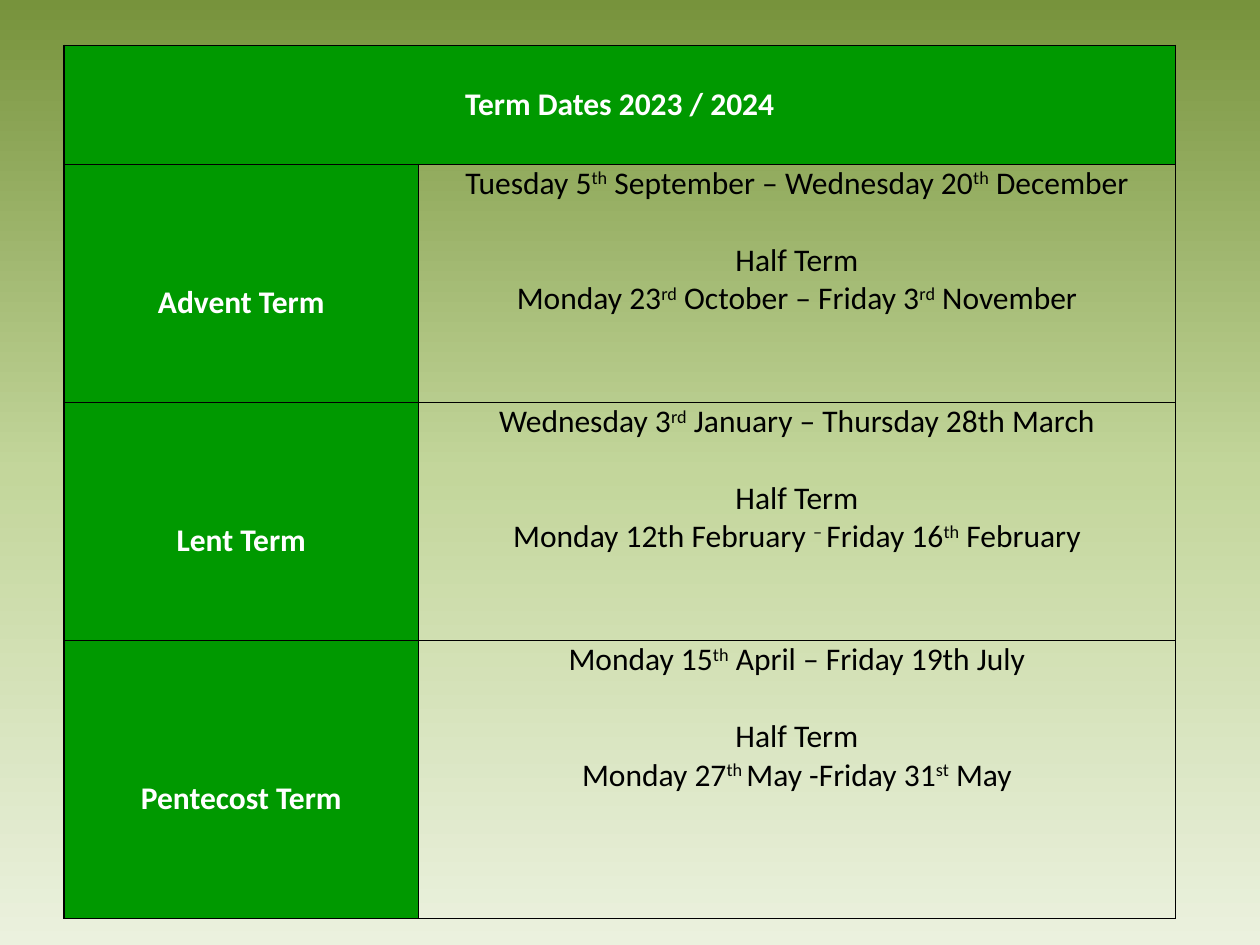
"""Build the term dates slide: a bordered table on a green gradient."""
from dataclasses import dataclass

from lxml.etree import SubElement
from pptx import Presentation
from pptx.dml.color import RGBColor
from pptx.enum.text import MSO_ANCHOR as Anchor, PP_ALIGN as Align
from pptx.oxml.ns import qn
from pptx.slide import Slide
from pptx.table import _Cell as Cell
from pptx.util import Inches, Pt

WIDTH, HEIGHT = Inches(10), Inches(7.5)
GREEN = RGBColor(0x00, 0x99, 0x00)
WHITE = RGBColor(0xFF, 0xFF, 0xFF)
BLACK = RGBColor(0x00, 0x00, 0x00)
GRADIENT = (
    (0, RGBColor(0x77, 0x93, 0x3C)),
    (50, RGBColor(0xC3, 0xD6, 0x9B)),
    (100, RGBColor(0xEB, 0xF1, 0xDE)),
)
FONT = "Calibri"
TEXT_SIZE = Pt(18)
BLANK_LINE = Pt(22)
SUPERSCRIPT_MARK = "^"
LEFT, TOP = 5.1, 4.8
COLUMN_SHARES = (28.1, 60.1)
ROW_SHARES = (12.6, 25.2, 25.2, 29.4)


@dataclass(frozen=True)
class Term:
    name: str
    dates: str
    half_term: str


TITLE = "Term Dates 2023 / 2024"
TERMS = (
    Term(
        "Advent Term",
        "Tuesday 5^th^ September – Wednesday 20^th^ December",
        "Monday 23^rd^ October – Friday 3^rd^ November",
    ),
    Term(
        "Lent Term",
        "Wednesday 3^rd^ January – Thursday 28th March",
        "Monday 12th February ^– ^Friday 16^th^ February",
    ),
    Term(
        "Pentecost Term",
        "Monday 15^th^ April – Friday 19th July",
        "Monday 27^th ^May -Friday 31^st^ May",
    ),
)


def across(share: float) -> int:
    """Turn a percentage of the slide width into a length."""
    return round(WIDTH * share / 100)


def down(share: float) -> int:
    """Turn a percentage of the slide height into a length."""
    return round(HEIGHT * share / 100)


def paint_background(slide: Slide) -> None:
    """Fill the slide with the vertical gradient."""
    fill = slide.background.fill
    fill.gradient()
    fill.gradient_angle = 270
    stops = slide.element.find(".//" + qn("a:gsLst"))
    for stop in list(stops):
        stops.remove(stop)
    for percent, color in GRADIENT:
        stop = SubElement(stops, qn("a:gs"), pos=str(percent * 1000))
        SubElement(stop, qn("a:srgbClr"), val=str(color))


def add_borders(cell: Cell) -> None:
    """Draw a black one-point line on each side of the cell."""
    properties = cell._tc.get_or_add_tcPr()
    for side in ("a:lnL", "a:lnR", "a:lnT", "a:lnB"):
        line = SubElement(properties, qn(side), w=str(Pt(1)))
        solid = SubElement(line, qn("a:solidFill"))
        SubElement(solid, qn("a:srgbClr"), val=str(BLACK))


def prepare_cell(cell: Cell) -> None:
    """Give the cell its margins, borders and empty fill."""
    cell.margin_left = cell.margin_right = Inches(0.07)
    cell.margin_top = cell.margin_bottom = 0
    add_borders(cell)
    cell.fill.background()


def write_lines(cell: Cell, lines: tuple[str, ...], color: RGBColor, bold: bool) -> None:
    """Write centred lines, raising the parts between superscript marks."""
    cell.text_frame.text = "\n".join(lines)
    for paragraph, line in zip(cell.text_frame.paragraphs, lines):
        paragraph.alignment = Align.CENTER
        paragraph.text = ""
        for index, part in enumerate(line.split(SUPERSCRIPT_MARK)):
            run = paragraph.add_run()
            run.text = part
            run.font.name = FONT
            run.font.size = TEXT_SIZE
            run.font.bold = bold
            run.font.color.rgb = color
            if index % 2:
                run.font._element.set("baseline", "30000")


def write_heading(cell: Cell, text: str, line_spacing: float = 1.0) -> None:
    """Write a bold white heading on green."""
    cell.fill.solid()
    cell.fill.fore_color.rgb = GREEN
    cell.vertical_anchor = Anchor.MIDDLE
    write_lines(cell, (text,), WHITE, True)
    cell.text_frame.paragraphs[0].line_spacing = line_spacing


def write_dates(cell: Cell, term: Term) -> None:
    """Write the term dates and, one line lower, the half term."""
    write_lines(cell, (term.dates, "Half Term", term.half_term), BLACK, False)
    cell.text_frame.paragraphs[1].space_before = BLANK_LINE


def add_term_table(slide: Slide) -> None:
    """Add the table with its title row and one row per term."""
    frame = slide.shapes.add_table(
        len(ROW_SHARES), len(COLUMN_SHARES), across(LEFT), down(TOP),
        across(sum(COLUMN_SHARES)), down(sum(ROW_SHARES)),
    )
    table = frame.table
    table.first_row = table.horz_banding = False
    for column, share in zip(table.columns, COLUMN_SHARES):
        column.width = across(share)
    for row, share in zip(table.rows, ROW_SHARES):
        row.height = down(share)
    for cell in table.iter_cells():
        prepare_cell(cell)
    table.cell(0, 0).merge(table.cell(0, 1))
    write_heading(table.cell(0, 0), TITLE)
    for row_index, term in enumerate(TERMS, start=1):
        write_heading(table.cell(row_index, 0), term.name, 2.0)
        write_dates(table.cell(row_index, 1), term)


def main() -> None:
    """Build and save the presentation."""
    presentation = Presentation()
    presentation.slide_width, presentation.slide_height = WIDTH, HEIGHT
    slide = presentation.slides.add_slide(presentation.slide_layouts[6])
    paint_background(slide)
    add_term_table(slide)
    presentation.save("out.pptx")


if __name__ == "__main__":
    main()
